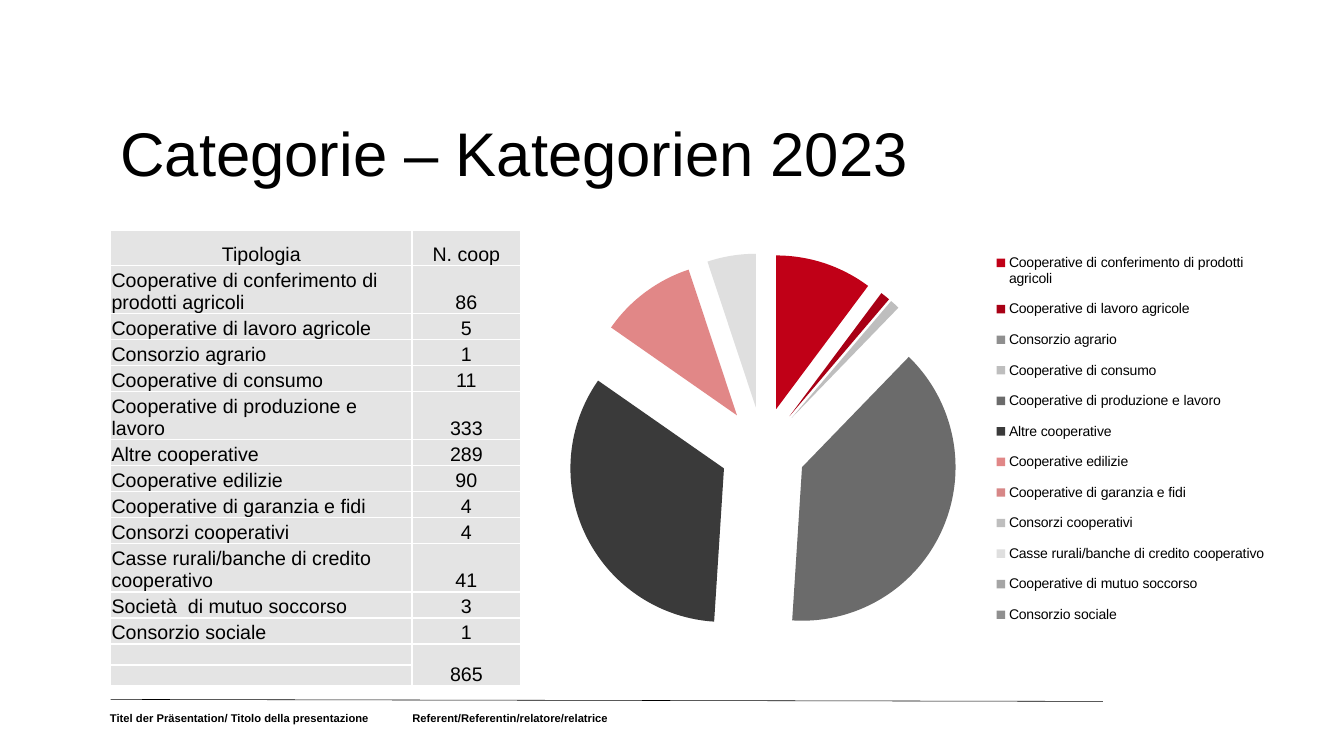
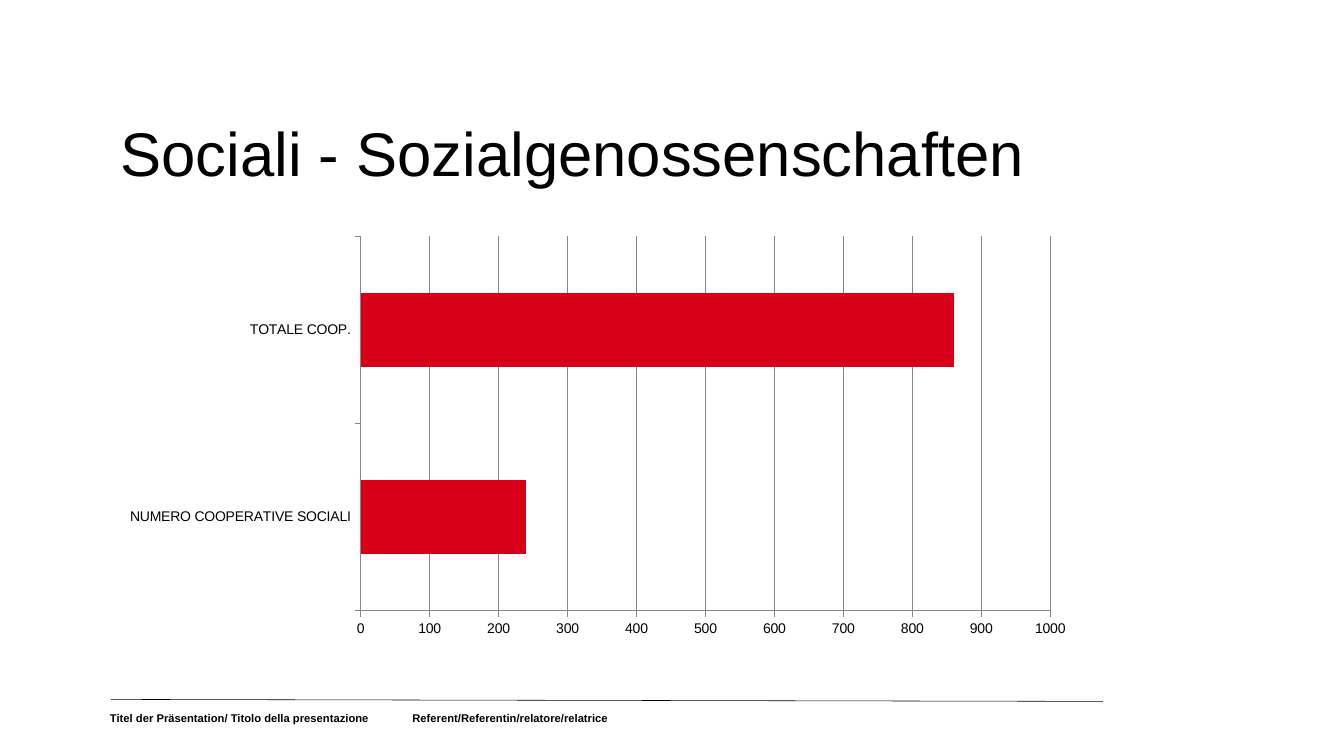
"""Build two slides on cooperatives: categories in 2023 and the share of social ones."""
from dataclasses import dataclass

from lxml.etree import SubElement
from pptx import Presentation
from pptx.chart.data import CategoryChartData
from pptx.dml.color import RGBColor
from pptx.enum.chart import XL_CHART_TYPE, XL_LEGEND_POSITION, XL_TICK_MARK
from pptx.enum.shapes import MSO_CONNECTOR
from pptx.enum.text import MSO_ANCHOR, PP_ALIGN
from pptx.oxml import parse_xml
from pptx.oxml.ns import nsdecls, qn
from pptx.util import Pt


@dataclass(frozen=True)
class Theme:
    font: str = "Arial"
    ink: str = "000000"
    paper: str = "FFFFFF"
    cell: str = "E4E4E4"
    grid: str = "868686"
    accent: str = "D80019"
    slices: tuple = ("C00017", "A80015", "8F8F8F", "BEBEBE", "6B6B6B", "3A3A3A",
                     "E18787", "D78787", "BEBEBE", "DFDFDF", "A5A5A5", "8F8F8F")
    title_size: float = 44
    table_size: float = 14
    chart_size: float = 10
    footer_size: float = 8


T = Theme()
LEFT = 79
FOOTER = "Titel der Präsentation/ Titolo della presentazione\tReferent/Referentin/relatore/relatrice"
TITLES = ("Categorie – Kategorien 2023", "Sociali - Sozialgenossenschaften")
HEADER = ("Tipologia", "N. coop")
TOTAL = 865
CATEGORIES = [
    ("Cooperative di conferimento di prodotti agricoli", 86),
    ("Cooperative di lavoro agricole", 5),
    ("Consorzio agrario", 1),
    ("Cooperative di consumo", 11),
    ("Cooperative di produzione e lavoro", 333),
    ("Altre cooperative", 289),
    ("Cooperative edilizie", 90),
    ("Cooperative di garanzia e fidi", 4),
    ("Consorzi cooperativi", 4),
    ("Casse rurali/banche di credito cooperativo", 41),
    ("Società  di mutuo soccorso", 3),
    ("Consorzio sociale", 1),
]
LEGEND_NAMES = {"Società  di mutuo soccorso": "Cooperative di mutuo soccorso"}
SOCIAL = [("NUMERO COOPERATIVE SOCIALI", 240), ("TOTALE COOP.", 860)]
COLUMNS = (215.3, 77.7)
HEADER_ROW, BODY_ROW, LAST_ROW = 25, 18.6, 15


def rgb(color):
    return RGBColor.from_string(color)


def write(tf, text, *, size, bold=False, align=PP_ALIGN.LEFT, spacing=None, tab=None):
    p = tf.paragraphs[0]
    p.alignment = align
    if spacing:
        p.line_spacing = spacing
    if tab:
        tabs = SubElement(p._p.get_or_add_pPr(), qn("a:tabLst"))
        SubElement(tabs, qn("a:tab"), pos=str(Pt(tab)), algn="l")
    r = p.add_run()
    r.text = text
    r.font.name, r.font.size, r.font.bold = T.font, Pt(size), bold
    r.font.color.rgb = rgb(T.ink)


def add_text(s, box, text, **fmt):
    tf = s.shapes.add_textbox(*map(Pt, box)).text_frame
    tf.word_wrap = True
    write(tf, text, **fmt)


def add_slide(prs, title):
    s = prs.slides.add_slide(prs.slide_layouts[6])
    add_text(s, (71.5, 501, 376, 19), FOOTER, size=T.footer_size, bold=True,
             spacing=Pt(13), tab=216)
    rule = s.shapes.add_connector(MSO_CONNECTOR.STRAIGHT, Pt(LEFT), Pt(499.6), Pt(787.7), Pt(501))
    rule.line.color.rgb = rgb(T.ink)
    rule.line.width = Pt(0.4)
    SubElement(rule._element.spPr, qn("a:effectLst"))
    add_text(s, (LEFT, 84.5, 800, 70), title, size=T.title_size, spacing=0.9)
    return s


def style_cell(cell):
    cell.vertical_anchor = MSO_ANCHOR.BOTTOM
    cell.margin_left = cell.margin_right = cell.margin_top = Pt(0.7)
    cell.margin_bottom = Pt(0)
    tc_pr = cell._tc.get_or_add_tcPr()
    for side in "LRTB":
        line = SubElement(tc_pr, qn(f"a:ln{side}"), w=str(Pt(1)))
        fill = SubElement(line, qn("a:solidFill"))
        SubElement(fill, qn("a:srgbClr"), val=T.paper)
    cell.fill.solid()
    cell.fill.fore_color.rgb = rgb(T.cell)


def add_category_table(s):
    rows = [HEADER, *CATEGORIES, ("", TOTAL), ("", "")]
    heights = [HEADER_ROW] + [BODY_ROW] * len(CATEGORIES) + [LAST_ROW] * 2
    box = (LEFT, 164.7, sum(COLUMNS), sum(heights))
    table = s.shapes.add_table(len(rows), len(COLUMNS), *map(Pt, box)).table
    table.first_row = table.horz_banding = False
    for column, width in zip(table.columns, COLUMNS):
        column.width = Pt(width)
    for i, (row, height) in enumerate(zip(rows, heights)):
        table.rows[i].height = Pt(height)
        for j, value in enumerate(row):
            cell = table.cell(i, j)
            style_cell(cell)
            if value == "":
                end = cell.text_frame.paragraphs[0]._p.get_or_add_endParaRPr()
                end.set("sz", str(int(T.chart_size * 100)))
            else:
                align = PP_ALIGN.CENTER if i == 0 or j == 1 else PP_ALIGN.LEFT
                write(cell.text_frame, str(value), size=T.table_size, align=align)
    last = len(rows) - 1
    table.cell(last - 1, 1).merge(table.cell(last, 1))


def add_chart(s, kind, box, pairs):
    data = CategoryChartData()
    data.categories = [name for name, _ in pairs]
    data.add_series("Series 1", [value for _, value in pairs])
    chart = s.shapes.add_chart(kind, *map(Pt, box), data).chart
    chart.has_title = chart.has_legend = False
    chart.font.name, chart.font.size = T.font, Pt(T.chart_size)
    chart.font.color.rgb = rgb(T.ink)
    return chart


def layout(x, y, w, h, inner=False):
    target = '<c:layoutTarget val="inner"/>' if inner else ""
    modes = "".join(f'<c:{a}Mode val="edge"/>' for a in "xy")
    sizes = "".join(f'<c:{a} val="{v}"/>' for a, v in zip("xywh", (x, y, w, h)))
    return parse_xml(f'<c:layout {nsdecls("c")}><c:manualLayout>{target}{modes}{sizes}'
                     "</c:manualLayout></c:layout>")


def set_layout(parent, new, after=None):
    for old in parent.findall(qn("c:layout")):
        parent.remove(old)
    if after is None:
        parent.insert(0, new)
    else:
        after.addnext(new)


def add_category_pie(s):
    shares = [(LEGEND_NAMES.get(name, name), round(100 * count / TOTAL))
              for name, count in CATEGORIES]
    chart = add_chart(s, XL_CHART_TYPE.PIE, (384, 156, 536, 312), shares)
    plot = chart.plots[0]
    plot.vary_by_categories = True
    series = plot.series[0]
    for i, color in enumerate(T.slices):
        fill = series.points[i].format.fill
        fill.solid()
        fill.fore_color.rgb = rgb(color)
    series._element.find(qn("c:dPt")).addprevious(
        parse_xml(f'<c:explosion {nsdecls("c")} val="28"/>'))
    set_layout(chart._chartSpace.chart.plotArea, layout(0, 0.08, 0.6, 0.9, inner=True))
    chart.has_legend = True
    legend = chart.legend
    legend.position = XL_LEGEND_POSITION.RIGHT
    legend.include_in_layout = False
    legend.font.name, legend.font.size = T.font, Pt(T.chart_size)
    legend.font.color.rgb = rgb(T.ink)
    element = legend._element
    set_layout(element, layout(0.6, 0.05, 0.38, 0.91), element.find(qn("c:legendPos")))


def add_social_bars(s):
    chart = add_chart(s, XL_CHART_TYPE.BAR_CLUSTERED, (LEFT, 163, 696, 297.5), SOCIAL)
    plot = chart.plots[0]
    plot.gap_width = 150
    plot.vary_by_categories = False
    fill = plot.series[0].format.fill
    fill.solid()
    fill.fore_color.rgb = rgb(T.accent)
    values = chart.value_axis
    values.minimum_scale, values.maximum_scale, values.major_unit = 0, 1000, 100
    values.has_major_gridlines = True
    for axis in (chart.category_axis, values):
        axis.major_tick_mark = XL_TICK_MARK.OUTSIDE
        axis.minor_tick_mark = XL_TICK_MARK.NONE
    for part in (chart.category_axis, values, values.major_gridlines):
        part.format.line.color.rgb = rgb(T.grid)
        part.format.line.width = Pt(0.75)


def main():
    prs = Presentation()
    prs.slide_width, prs.slide_height = Pt(960), Pt(540)
    categories, social = [add_slide(prs, title) for title in TITLES]
    add_category_table(categories)
    add_category_pie(categories)
    add_social_bars(social)
    prs.save("out.pptx")


if __name__ == "__main__":
    main()
